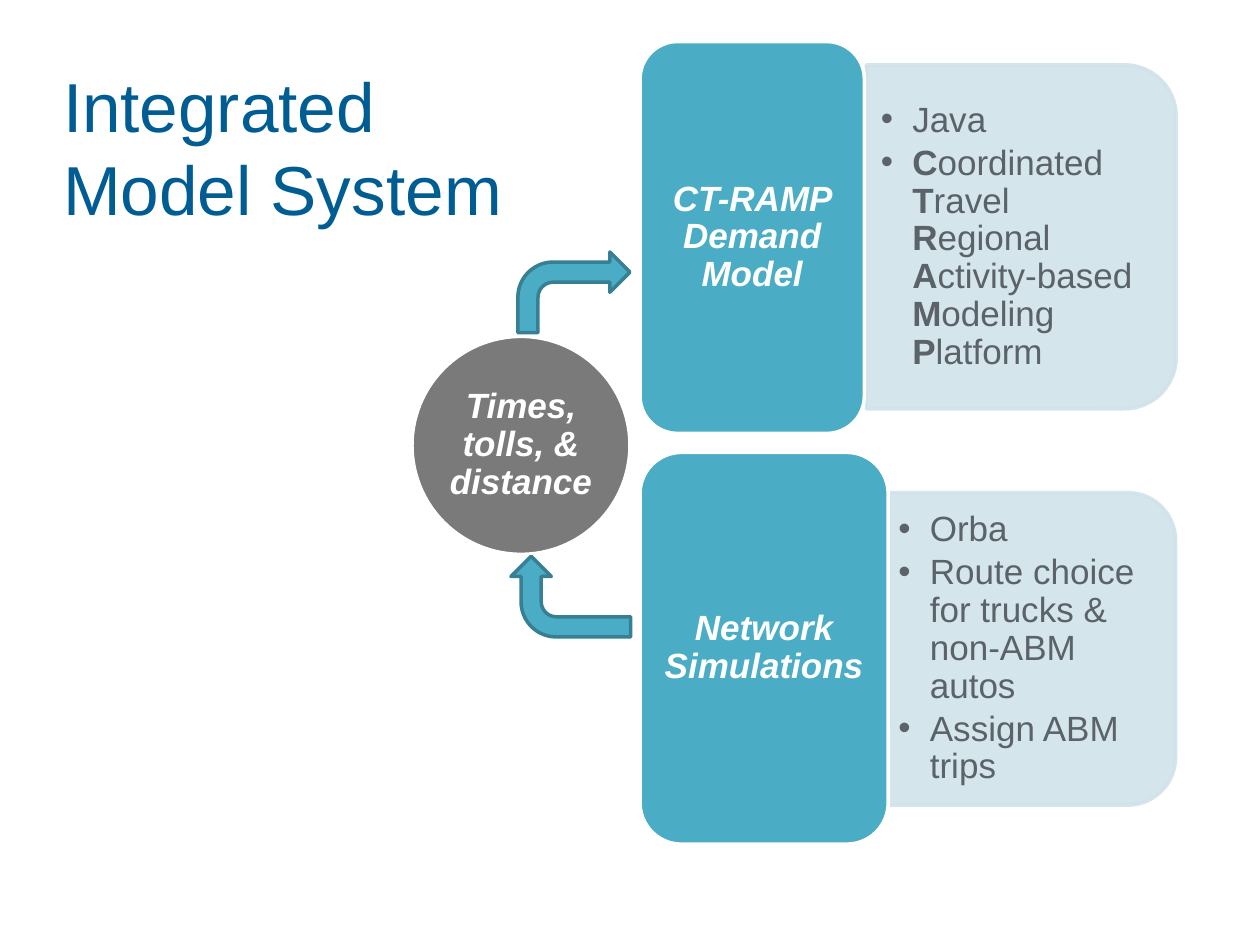
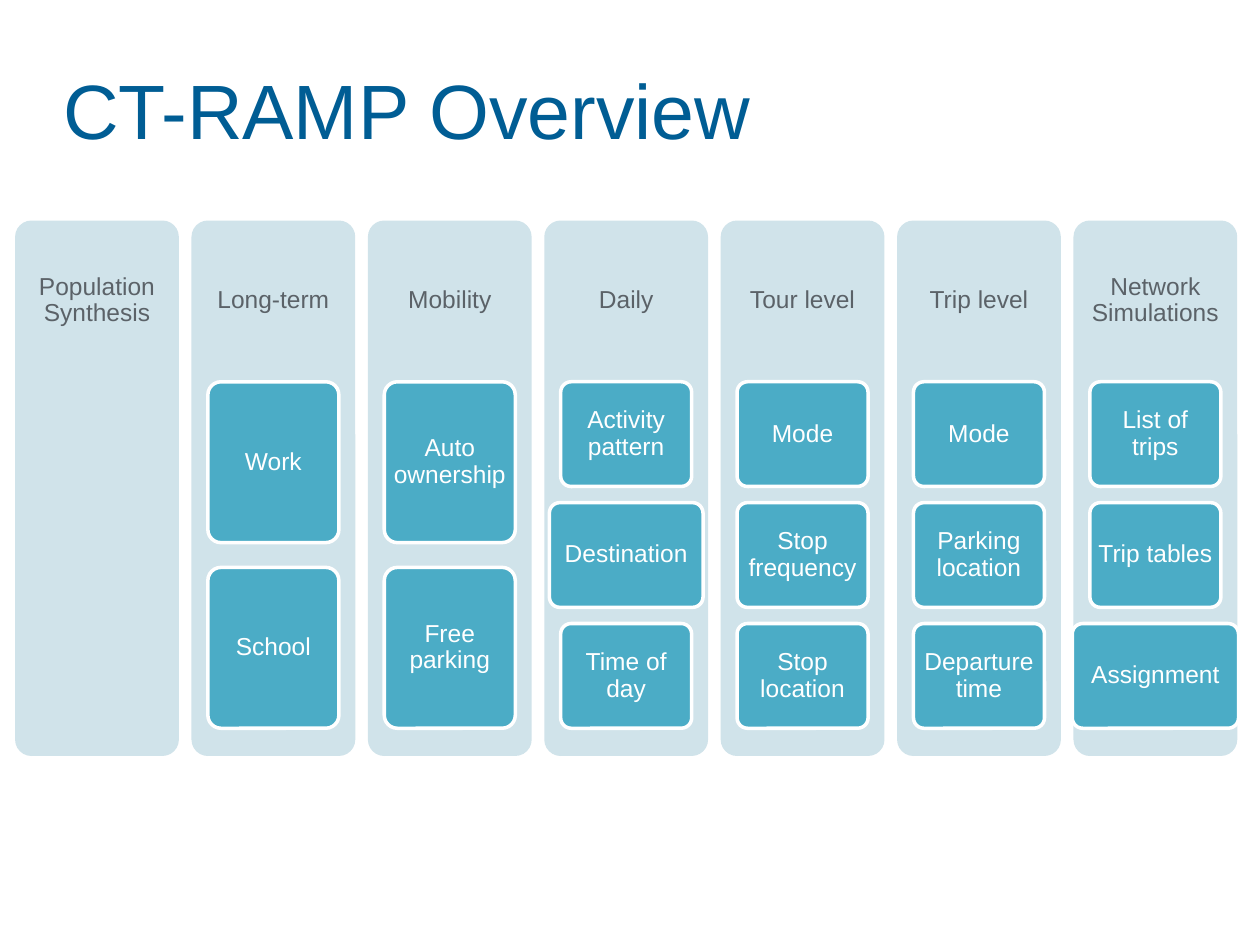
from dataclasses import dataclass

import lxml.etree
import pptx
import pptx.dml.color
import pptx.enum.shapes
import pptx.enum.text
import pptx.oxml.ns
import pptx.util
from pptx.util import Inches

Pt = pptx.util.Pt
SHAPE = pptx.enum.shapes.MSO_SHAPE
ALIGN = pptx.enum.text.PP_ALIGN
ANCHOR = pptx.enum.text.MSO_ANCHOR
qn = pptx.oxml.ns.qn

FONT = "Arial"
COLORS = {
    "title": "005D94",
    "panel": "D0E3EA",
    "box": "4BACC6",
    "arrow_edge": "377F92",
    "circle": "7A7A7A",
    "text": "5B6268",
    "white": "FFFFFF",
}


@dataclass(frozen=True)
class Rect:
    x: float
    y: float
    w: float
    h: float

    def emu(self) -> tuple:
        return tuple(Inches(v) for v in (self.x, self.y, self.w, self.h))


@dataclass(frozen=True)
class Style:
    size: float
    color: str
    bold: bool = False
    italic: bool = False


@dataclass(frozen=True)
class Module:
    label: str
    box: Rect
    panel: Rect
    list_area: Rect
    inset: tuple
    bullets: tuple


@dataclass(frozen=True)
class Stage:
    header: str
    steps: tuple = ()


BIG_LABEL = Style(20, "white", True, True)
LIST_TEXT = Style(20, "text")
HEADER = Style(14, "text")
STEP = Style(14, "white")

ACRONYM = ("Coordinated ", "Travel ", "Regional ", "Activity-based ", "Modeling ", "Platform")
ACRONYM_RUNS = tuple(part for word in ACRONYM for part in ((word[0], True), (word[1:], False)))

MODULES = (
    Module("CT-RAMP Demand Model", Rect(5.08, 0.33, 1.78, 3.11), Rect(6.74, 0.65, 2.73, 2.46),
           Rect(6.87, 0.64, 2.34, 2.48), (0.12, 0.06),
           ((("Java", False),), ACRONYM_RUNS)),
    Module("Network Simulations", Rect(5.08, 3.59, 1.97, 3.11), Rect(6.95, 4.01, 2.48, 2.28),
           Rect(7.05, 4.02, 2.17, 2.26), (0.08, 0.04),
           ((("Orba", False),), (("Route choice for trucks & non-ABM autos", False),),
            (("Assign ABM trips", False),))),
)

STAGES = (
    Stage("Population Synthesis"),
    Stage("Long-term", ("Work", "School")),
    Stage("Mobility", ("Auto ownership", "Free parking")),
    Stage("Daily", ("Activity pattern", "Destination", "Time of day")),
    Stage("Tour level", ("Mode", "Stop frequency", "Stop location")),
    Stage("Trip level", ("Mode", "Parking location", "Departure time")),
    Stage("Network Simulations", ("List of trips", "Trip tables", "Assignment")),
)
STEP_WIDTH = 1.04
WIDE_STEPS = {"Destination": 1.22, "Assignment": 1.32}
COLUMN = Rect(0.12, 1.75, 1.3, 4.25)
COLUMN_PITCH = 1.4
HEADER_HEIGHT = 1.27
STEPS_TOP, STEPS_HEIGHT = 3.03, 2.75
GAP_RATIO = 0.154


def rgb(name: str):
    return pptx.dml.color.RGBColor.from_string(COLORS[name])


def add_run(p, text: str, style: Style) -> None:
    r = p.add_run()
    r.text = text
    r.font.name = FONT
    r.font.size = Pt(style.size)
    r.font.bold = style.bold
    r.font.italic = style.italic
    r.font.color.rgb = rgb(style.color)


def set_frame(tf, inset: tuple, anchor=ANCHOR.MIDDLE) -> None:
    tf.word_wrap = True
    tf.auto_size = pptx.enum.text.MSO_AUTO_SIZE.NONE
    tf.vertical_anchor = anchor
    tf.margin_left = tf.margin_right = Inches(inset[0])
    tf.margin_top = tf.margin_bottom = Inches(inset[1])


def add_label(sp, text: str, style: Style, inset: tuple) -> None:
    set_frame(sp.text_frame, inset)
    p = sp.text_frame.paragraphs[0]
    p.alignment = ALIGN.CENTER
    p.line_spacing = 0.9
    add_run(p, text, style)


def add_shape(s, kind, rect: Rect, fill: str, line: str = "", rotation: float = 0):
    sp = s.shapes.add_shape(kind, *rect.emu())
    sp.shadow.inherit = False
    sp.rotation = rotation
    sp.fill.solid()
    sp.fill.fore_color.rgb = rgb(fill)
    if line:
        sp.line.color.rgb = rgb(line)
        sp.line.width = Pt(2)
    else:
        sp.line.fill.background()
    return sp


def place(sp, rect: Rect) -> None:
    sp.left, sp.top, sp.width, sp.height = rect.emu()


def add_title(s, lines: tuple, size: float) -> None:
    sp = s.shapes.title
    place(sp, Rect(0.5, 0.5, 9, 1.05))
    set_frame(sp.text_frame, (0, 0), ANCHOR.TOP)
    p = sp.text_frame.paragraphs[0]
    p.alignment = ALIGN.LEFT
    for i, line in enumerate(lines):
        if i:
            p.add_line_break()
        add_run(p, line, Style(size, "title"))


def fill_list(sp, module: Module) -> None:
    place(sp, module.list_area)
    tf = sp.text_frame
    set_frame(tf, module.inset)
    for i, runs in enumerate(module.bullets):
        p = tf.add_paragraph() if i else tf.paragraphs[0]
        pPr = p._p.get_or_add_pPr()
        pPr.set("marL", str(Inches(0.25)))
        pPr.set("indent", str(-Inches(0.25)))
        lxml.etree.SubElement(pPr, qn("a:buChar")).set("char", "•")
        p.alignment = ALIGN.LEFT
        p.line_spacing = 0.9
        p.space_before = Pt(0)
        p.space_after = Pt(3)
        for text, bold in runs:
            add_run(p, text, Style(LIST_TEXT.size, LIST_TEXT.color, bold))


def add_module(s, module: Module, body) -> None:
    panel = add_shape(s, SHAPE.ROUND_2_SAME_RECTANGLE, module.panel, "panel", "panel", 90)
    for color in panel._element.spPr.iter(qn("a:srgbClr")):
        lxml.etree.SubElement(color, qn("a:alpha")).set("val", "90000")
    fill_list(body, module)
    panel._element.addnext(body._element)
    box = add_shape(s, SHAPE.ROUNDED_RECTANGLE, module.box, "box", "white")
    add_label(box, module.label, BIG_LABEL, (0.08, 0.04))


def add_stage(s, stage: Stage, x: float) -> None:
    column = add_shape(s, SHAPE.ROUNDED_RECTANGLE, Rect(x, COLUMN.y, COLUMN.w, COLUMN.h), "panel")
    column.adjustments[0] = 0.1
    header = s.shapes.add_textbox(*Rect(x, COLUMN.y, COLUMN.w, HEADER_HEIGHT).emu())
    add_label(header, stage.header, HEADER, (0.06, 0.06))
    n = len(stage.steps)
    height = STEPS_HEIGHT / (n + GAP_RATIO * (n - 1)) if n else 0
    for i, step in enumerate(stage.steps):
        width = WIDE_STEPS.get(step, STEP_WIDTH)
        rect = Rect(x + (COLUMN.w - width) / 2, STEPS_TOP + i * height * (1 + GAP_RATIO),
                    width, height)
        tile = add_shape(s, SHAPE.ROUNDED_RECTANGLE, rect, "box", "white")
        tile.adjustments[0] = 0.1
        add_label(tile, step, STEP, (0.04, 0.03))


def build_model_system(prs) -> None:
    s = prs.slides.add_slide(prs.slide_layouts[3])
    add_title(s, ("Integrated", "Model System"), 39.6)
    bodies = [sp for sp in s.placeholders if sp.placeholder_format.idx in (1, 2)]
    for module, body in zip(MODULES, bodies):
        add_module(s, module, body)
    circle = add_shape(s, SHAPE.OVAL, Rect(3.27, 2.67, 1.73, 1.73), "circle", "white")
    add_label(circle, "Times, tolls, & distance", BIG_LABEL, (0.03, 0.03))
    for rect, rotation in ((Rect(4.21, 4.26, 0.64, 0.95), 270), (Rect(4.11, 2, 0.89, 0.64), 0)):
        add_shape(s, SHAPE.BENT_ARROW, rect, "box", "arrow_edge", rotation)


def build_overview(prs) -> None:
    s = prs.slides.add_slide(prs.slide_layouts[5])
    add_title(s, ("CT-RAMP Overview",), 44)
    for i, stage in enumerate(STAGES):
        add_stage(s, stage, COLUMN.x + i * COLUMN_PITCH)


def main() -> None:
    prs = pptx.Presentation()
    prs.slide_width, prs.slide_height = Inches(10), Inches(7.5)
    build_model_system(prs)
    build_overview(prs)
    prs.save("out.pptx")


if __name__ == "__main__":
    main()
